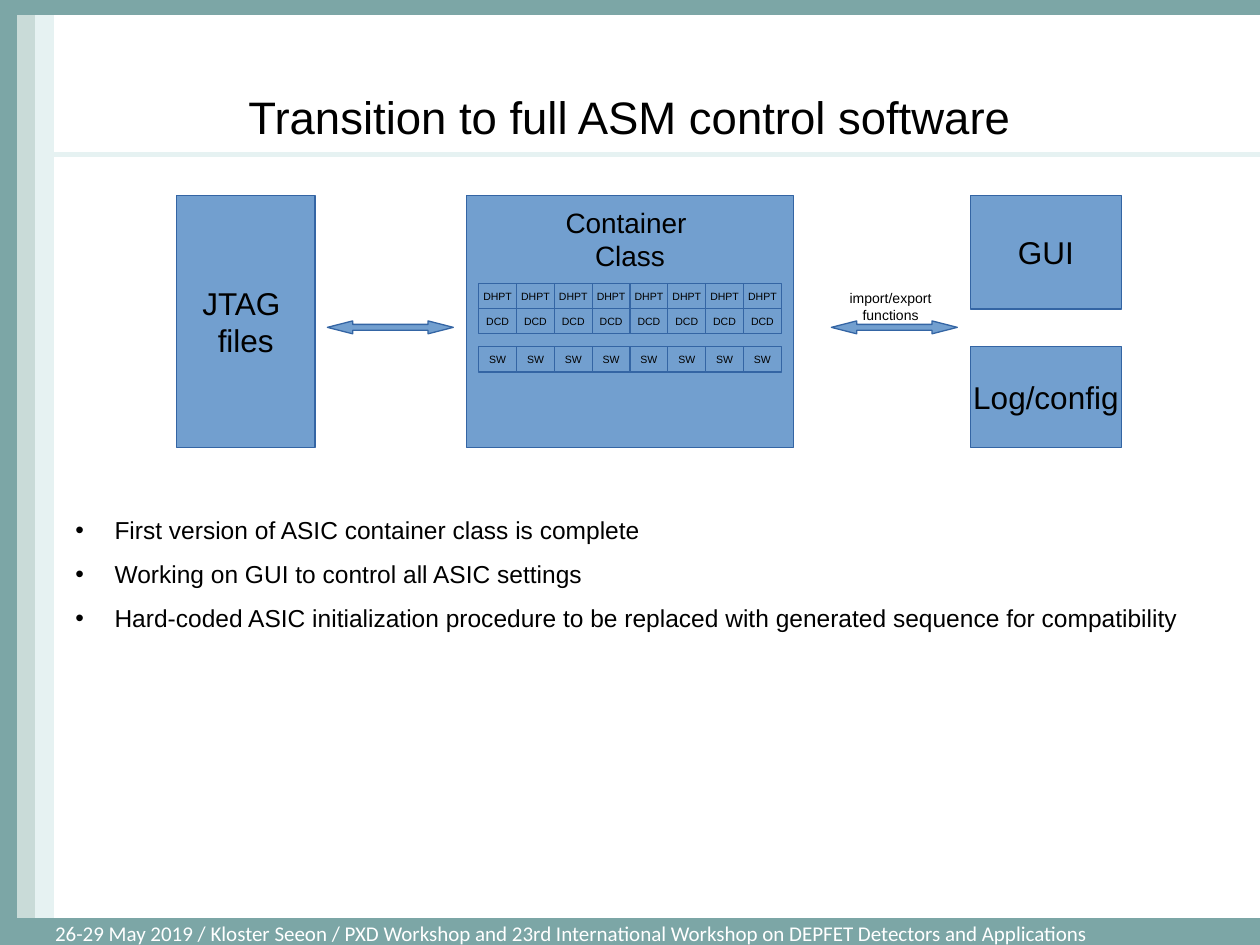
"""Build the slide on the transition to full ASM control software."""
from dataclasses import dataclass

from lxml import etree
from pptx import Presentation
from pptx.dml.color import RGBColor
from pptx.enum.shapes import MSO_CONNECTOR, MSO_SHAPE
from pptx.enum.text import MSO_ANCHOR, PP_ALIGN
from pptx.oxml.ns import qn
from pptx.util import Cm, Pt

RECTANGLE = MSO_SHAPE.RECTANGLE
STRAIGHT = MSO_CONNECTOR.STRAIGHT
TOP, MIDDLE = MSO_ANCHOR.TOP, MSO_ANCHOR.MIDDLE
LEFT, CENTER = PP_ALIGN.LEFT, PP_ALIGN.CENTER
TITLE_ONLY = 5
TEAL, GREY_TEAL, PALE_TEAL = "7CA6A6", "C9DBD8", "E6F2F2"
BLUE, DARK_BLUE = "729FCF", "3465A4"
BLACK, WHITE = "000000", "FFFFFF"


@dataclass
class Bar:
    left: float
    top: float
    width: float
    height: float
    color: str


@dataclass
class Box:
    text: str
    left: float
    top: float
    width: float
    height: float
    size: float
    anchor: MSO_ANCHOR = MIDDLE


@dataclass
class CellRow:
    label: str
    top: float


BARS = [
    Bar(0.33, 0, 0.36, 18.52, GREY_TEAL),
    Bar(0.71, 0, 0.36, 19.05, PALE_TEAL),
    Bar(0, 0, 0.33, 18.52, TEAL),
    Bar(0, -0.08, 25.4, 0.38, TEAL),
]
FOOTER_BAR = Bar(0, 18.52, 25.4, 0.58, TEAL)
FOOTER = ("26-29 May 2019 / Kloster Seeon / PXD Workshop and 23rd International "
          "Workshop on DEPFET Detectors and Applications")
BOXES = [
    Box("JTAG \nfiles", 3.56, 3.94, 2.79, 5.08, 18),
    Box("Container \nClass", 9.4, 3.94, 6.6, 5.08, 16, TOP),
    Box("GUI", 19.56, 3.94, 3.05, 2.29, 18),
    Box("Log/config", 19.56, 6.99, 3.05, 2.03, 18),
]
CELL_ROWS = [CellRow("DHPT", 5.72), CellRow("DCD", 6.22), CellRow("SW", 6.99)]
CELL_COLUMNS = 8
CELLS_LEFT, CELLS_WIDTH, CELL_HEIGHT = 9.65, 6.1, 0.51
ARROW_LEFTS = [6.6, 16.76]
ARROW_Y, ARROW_LENGTH, ARROW_HEAD = 6.6, 2.54, 0.51
HEAD_HALF, SHAFT_HALF = 0.13, 0.06
BULLETS = [
    "First version of ASIC container class is complete",
    "Working on GUI to control all ASIC settings",
    "Hard-coded ASIC initialization procedure to be replaced with "
    "generated sequence for compatibility",
]


def rgb(color: str) -> RGBColor:
    """Turn a hex string into a colour."""
    return RGBColor.from_string(color)


def style_shape(shape, fill: str, line: str) -> None:
    """Give a shape a flat fill and a thin outline."""
    shape.shadow.inherit = False
    shape.fill.solid()
    shape.fill.fore_color.rgb = rgb(fill)
    shape.line.color.rgb = rgb(line)
    shape.line.width = Pt(0.75)


def write_text(shape, text: str, size: float, color: str = BLACK, font: str = "Arial",
               alignment: PP_ALIGN = CENTER, anchor: MSO_ANCHOR = MIDDLE,
               wrap: bool = True) -> None:
    """Fill a shape with evenly formatted text."""
    frame = shape.text_frame
    frame.text = text
    frame.word_wrap = wrap
    frame.vertical_anchor = anchor
    for paragraph in frame.paragraphs:
        paragraph.alignment = alignment
        for run in paragraph.runs:
            run.font.size = Pt(size)
            run.font.name = font
            run.font.color.rgb = rgb(color)


def add_bar(slide, bar: Bar):
    """Draw one plain bar of the frame."""
    shape = slide.shapes.add_shape(
        RECTANGLE, Cm(bar.left), Cm(bar.top), Cm(bar.width), Cm(bar.height))
    style_shape(shape, bar.color, bar.color)
    return shape


def add_footer(slide) -> None:
    """Draw the bottom bar with the event line."""
    shape = add_bar(slide, FOOTER_BAR)
    write_text(shape, FOOTER, 12, WHITE, "Calibri", LEFT)
    shape.text_frame.margin_left = Cm(1.11)
    shape.text_frame.margin_top = shape.text_frame.margin_bottom = 0


def add_title_rule(slide) -> None:
    """Draw the line under the title."""
    rule = slide.shapes.add_connector(STRAIGHT, Cm(0.84), Cm(3.12), Cm(25.4), Cm(3.12))
    rule.line.color.rgb = rgb(PALE_TEAL)
    rule.line.width = Pt(3)
    etree.SubElement(rule._element.spPr, qn("a:effectLst"))


def set_title(slide) -> None:
    """Place and format the title."""
    title = slide.shapes.title
    title.left, title.top, title.width, title.height = Cm(1.27), Cm(0.76), Cm(22.86), Cm(3.18)
    write_text(title, "Transition to full ASM control software", 26)
    frame = title.text_frame
    frame.margin_left = frame.margin_right = frame.margin_top = frame.margin_bottom = 0


def add_box(slide, box: Box) -> None:
    """Draw one labelled block of the diagram."""
    shape = slide.shapes.add_shape(
        RECTANGLE, Cm(box.left), Cm(box.top), Cm(box.width), Cm(box.height))
    style_shape(shape, BLUE, DARK_BLUE)
    write_text(shape, box.text, box.size, anchor=box.anchor, wrap=False)
    if box.anchor == TOP:
        shape.text_frame.margin_top = Cm(0.2)


def add_cells(slide, row: CellRow) -> None:
    """Draw one row of equal cells inside the container."""
    width = CELLS_WIDTH / CELL_COLUMNS
    for column in range(CELL_COLUMNS):
        left = CELLS_LEFT + column * width
        add_box(slide, Box(row.label, left, row.top, width, CELL_HEIGHT, 6))


def add_double_arrow(slide, left: float) -> None:
    """Draw a block arrow that points both ways."""
    right = left + ARROW_LENGTH
    neck_left, neck_right = left + ARROW_HEAD, right - ARROW_HEAD
    upper = [(neck_left, -HEAD_HALF), (neck_left, -SHAFT_HALF),
             (neck_right, -SHAFT_HALF), (neck_right, -HEAD_HALF)]
    lower = [(x, -offset) for x, offset in reversed(upper)]
    outline = [(Cm(x), Cm(ARROW_Y + offset)) for x, offset in upper + [(right, 0)] + lower]
    builder = slide.shapes.build_freeform(Cm(left), Cm(ARROW_Y))
    builder.add_line_segments(outline, close=True)
    style_shape(builder.convert_to_shape(), BLUE, DARK_BLUE)


def add_bullets(slide) -> None:
    """Write the status list."""
    shape = slide.shapes.add_textbox(Cm(1.27), Cm(9.96), Cm(23.62), Cm(7.37))
    write_text(shape, "\n".join(BULLETS), 14, alignment=LEFT, anchor=TOP)
    for paragraph in shape.text_frame.paragraphs:
        paragraph.line_spacing = 1.5
        properties = paragraph._p.get_or_add_pPr()
        properties.set("marL", str(Cm(0.79)))
        properties.set("indent", str(-Cm(0.79)))
        etree.SubElement(properties, qn("a:buFont"), typeface="Arial")
        etree.SubElement(properties, qn("a:buChar"), char="•")


def main() -> None:
    """Build and save the presentation."""
    presentation = Presentation()
    presentation.slide_width, presentation.slide_height = Cm(25.4), Cm(19.05)
    slide = presentation.slides.add_slide(presentation.slide_layouts[TITLE_ONLY])
    set_title(slide)
    for bar in BARS:
        add_bar(slide, bar)
    add_footer(slide)
    add_title_rule(slide)
    add_bullets(slide)
    for box in BOXES:
        add_box(slide, box)
    for row in CELL_ROWS:
        add_cells(slide, row)
    for left in ARROW_LEFTS:
        add_double_arrow(slide, left)
    label = slide.shapes.add_textbox(Cm(16.76), Cm(5.72), Cm(2.39), Cm(1.02))
    write_text(label, "import/export functions", 8, anchor=TOP)
    presentation.save("out.pptx")


if __name__ == "__main__":
    main()
